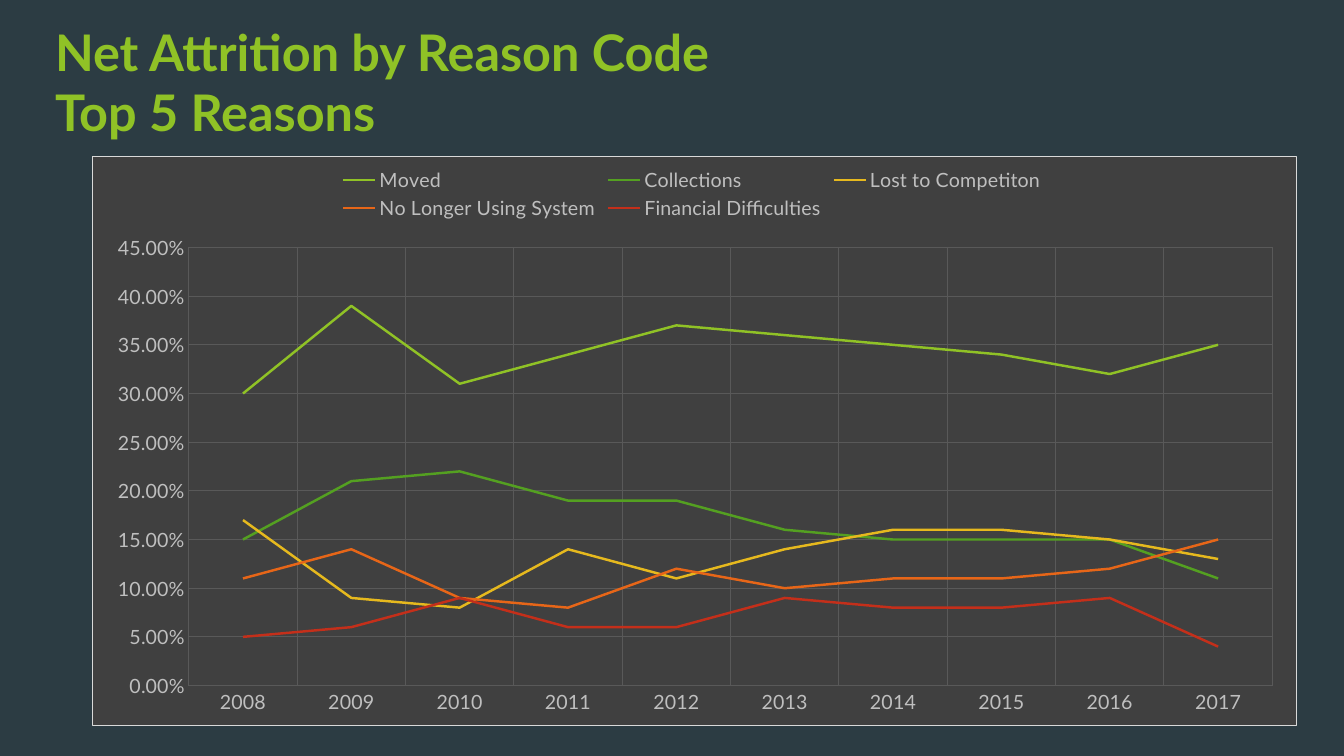
from lxml import etree
from pptx import Presentation, util as u
from pptx.chart.data import CategoryChartData
from pptx.dml.color import RGBColor
from pptx.enum import chart as ch, text
from pptx.oxml import parse_xml
from pptx.oxml.ns import nsdecls, qn

PX = 914400 / 100.8
FONT = "Lato"
COLORS = {
    "background": "2C3C43", "title": "90C226", "panel": "404040",
    "border": "D9D9D9", "grid": "595959", "label": "BFBFBF",
}
YEARS = [str(year) for year in range(2008, 2018)]
# Reason, line colour, share of attrition per year
REASONS = [
    ("Moved", "90C226",
     [.3, .39, .31, .34, .37, .36, .35, .34, .32, .35]),
    ("Collections", "54A021",
     [.15, .21, .22, .19, .19, .16, .15, .15, .15, .11]),
    ("Lost to Competiton ", "E6B91E",
     [.17, .09, .08, .14, .11, .14, .16, .16, .15, .13]),
    ("No Longer Using System", "E76618",
     [.11, .14, .09, .08, .12, .1, .11, .11, .12, .15]),
    ("Financial Difficulties", "C42F1A",
     [.05, .06, .09, .06, .06, .09, .08, .08, .09, .04]),
]


def px(length):
    return u.Emu(round(length * PX))


def rgb(name):
    return RGBColor.from_string(COLORS[name])


def style_font(font, size, color, bold=False):
    font.name, font.size, font.bold = FONT, u.Pt(size), bold
    font.color.rgb = rgb(color)


def place_title(slide, left, top, width, height):
    title = slide.shapes.title
    title.left, title.top, title.width, title.height = map(px, (left, top, width, height))
    frame = title.text_frame
    frame.word_wrap = True
    frame.auto_size = text.MSO_AUTO_SIZE.NONE
    frame.vertical_anchor = text.MSO_ANCHOR.TOP
    paragraph = frame.paragraphs[0]
    paragraph.alignment = text.PP_ALIGN.LEFT
    paragraph.line_spacing = 1.0
    for index, line in enumerate(("Net Attrition by Reason Code", "Top 5 Reasons")):
        if index:
            paragraph.add_line_break()
        run = paragraph.add_run()
        run.text = line
        style_font(run.font, 36, "title", bold=True)


def style_axis(axis):
    axis.major_tick_mark = axis.minor_tick_mark = ch.XL_TICK_MARK.NONE
    axis.format.line.fill.background()
    axis.has_major_gridlines = True
    grid = axis.major_gridlines.format.line
    grid.color.rgb, grid.width = rgb("grid"), u.Pt(0.75)
    style_font(axis.tick_labels.font, 14, "label")


def fix_plot_area(chart, x, y, w, h):
    """Set the inner plot area as fractions of the chart."""
    plot_area = chart._chartSpace.chart.plotArea
    for layout in plot_area.findall(qn("c:layout")):
        plot_area.remove(layout)
    layout = etree.Element(qn("c:layout"))
    manual = etree.SubElement(layout, qn("c:manualLayout"))
    settings = [("layoutTarget", "inner"), ("xMode", "edge"), ("yMode", "edge"),
                ("x", x), ("y", y), ("w", w), ("h", h)]
    for tag, value in settings:
        etree.SubElement(manual, qn("c:" + tag)).set("val", str(value))
    plot_area.insert(0, layout)


def fill_panel(chart):
    """Give the chart area its fill and border."""
    properties = parse_xml(
        f'<c:spPr {nsdecls("c", "a")}>'
        f'<a:solidFill><a:srgbClr val="{COLORS["panel"]}"/></a:solidFill>'
        f'<a:ln w="9525"><a:solidFill><a:srgbClr val="{COLORS["border"]}"/>'
        '</a:solidFill></a:ln></c:spPr>')
    chart._chartSpace.chart.addnext(properties)


def place_chart(slide, left, top, width, height):
    data = CategoryChartData(number_format="0.00%")
    data.categories = YEARS
    for reason, _, shares in REASONS:
        data.add_series(reason, shares)
    chart = slide.shapes.add_chart(
        ch.XL_CHART_TYPE.LINE, *map(px, (left, top, width, height)), data).chart
    style_font(chart.font, 14, "label")
    chart.has_title = False

    # Legend
    chart.has_legend = True
    chart.legend.position = ch.XL_LEGEND_POSITION.TOP
    chart.legend.include_in_layout = False
    style_font(chart.legend.font, 14, "label")

    # Axes
    style_axis(chart.category_axis)
    shares_axis = chart.value_axis
    style_axis(shares_axis)
    shares_axis.minimum_scale, shares_axis.maximum_scale = 0, 0.45
    shares_axis.major_unit = 0.05
    shares_axis.tick_labels.number_format = "0.00%"
    shares_axis.tick_labels.number_format_is_linked = False

    # Lines
    plot = chart.plots[0]
    plot.vary_by_categories = False
    for series, (_, color, _) in zip(plot.series, REASONS):
        series.smooth = False
        series.marker.style = ch.XL_MARKER_STYLE.NONE
        series.format.line.color.rgb = RGBColor.from_string(color)
        series.format.line.width = u.Pt(1.75)

    fix_plot_area(chart, 0.08, 0.16, 0.9, 0.77)
    fill_panel(chart)


def main():
    presentation = Presentation()
    presentation.slide_width, presentation.slide_height = px(1344), px(756)
    slide = presentation.slides.add_slide(presentation.slide_layouts[5])
    slide.background.fill.solid()
    slide.background.fill.fore_color.rgb = rgb("background")
    place_title(slide, 45, 16, 948, 145)
    place_chart(slide, 92, 156, 1205, 570)
    presentation.save("out.pptx")


if __name__ == "__main__":
    main()
